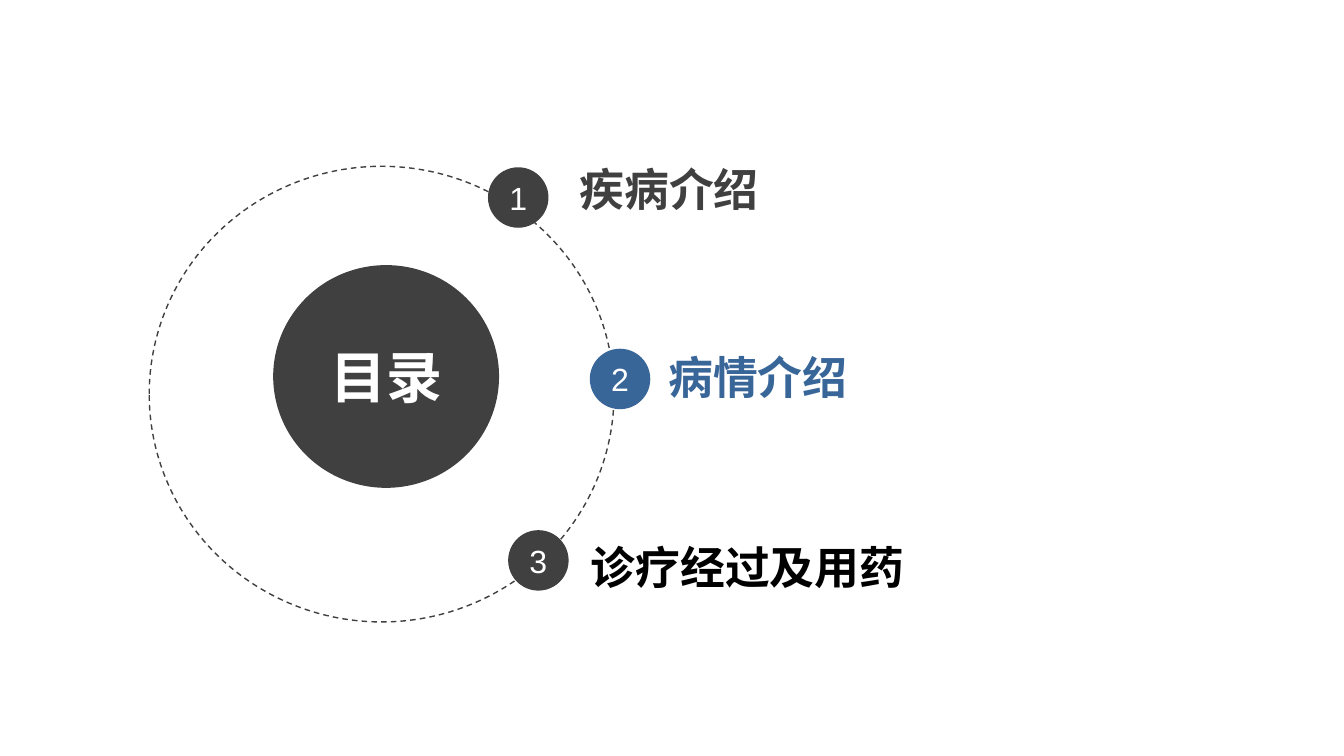
from dataclasses import dataclass

import pptx
import pptx.dml.color
import pptx.enum.dml
import pptx.enum.shapes
import pptx.enum.text
import pptx.oxml
import pptx.oxml.ns
import pptx.util
from pptx.util import Inches


@dataclass(frozen=True)
class Theme:
    dark: str = "404040"
    accent: str = "396698"
    black: str = "000000"
    white: str = "FFFFFF"
    latin: str = "Arial"
    chinese: str = "Noto Sans CJK SC"
    title_size: float = 40
    topic_size: float = 32
    number_size: float = 22.9


class ContentsPage:
    def __init__(self, deck, theme):
        self.theme = theme
        self.page = deck.slides.add_slide(deck.slide_layouts[6])

    def label(self, frame, text, size, color, font, bold=False):
        para = frame.paragraphs[0]
        span = para.add_run()
        span.text = text
        span.font.size = pptx.util.Pt(size)
        span.font.bold = bold
        span.font.name = font
        span.font.color.rgb = pptx.dml.color.RGBColor.from_string(color)
        east_asian = pptx.oxml.parse_xml(
            f'<a:ea {pptx.oxml.ns.nsdecls("a")} typeface="{self.theme.chinese}"/>'
        )
        span.font._element.find(pptx.oxml.ns.qn("a:latin")).addnext(east_asian)
        return para

    def ellipse(self, left, top, width, height):
        shape = self.page.shapes.add_shape(
            pptx.enum.shapes.MSO_SHAPE.OVAL,
            Inches(left), Inches(top), Inches(width), Inches(height),
        )
        shape.shadow.inherit = False
        return shape

    def orbit(self, left, top, width, height):
        ring = self.ellipse(left, top, width, height)
        ring.fill.background()
        ring.line.color.rgb = pptx.dml.color.RGBColor.from_string(self.theme.dark)
        ring.line.width = pptx.util.Pt(1)
        ring.line.dash_style = pptx.enum.dml.MSO_LINE.DASH

    def disc(self, left, top, width, height, color, text, size, bold=False):
        disc = self.ellipse(left, top, width, height)
        disc.fill.solid()
        disc.fill.fore_color.rgb = pptx.dml.color.RGBColor.from_string(color)
        disc.line.fill.background()
        frame = disc.text_frame
        frame.margin_left = frame.margin_right = 0
        frame.margin_top = frame.margin_bottom = 0
        frame.vertical_anchor = pptx.enum.text.MSO_ANCHOR.MIDDLE
        para = self.label(
            frame, text, size, self.theme.white, self.theme.latin, bold
        )
        para.alignment = pptx.enum.text.PP_ALIGN.CENTER

    def topic(self, left, top, width, text, color):
        box = self.page.shapes.add_textbox(
            Inches(left), Inches(top), Inches(width), Inches(0.64)
        )
        frame = box.text_frame
        frame.word_wrap = True
        frame.auto_size = pptx.enum.text.MSO_AUTO_SIZE.SHAPE_TO_FIT_TEXT
        self.label(
            frame, text, self.theme.topic_size, color, self.theme.chinese, bold=True
        )


def main():
    theme = Theme()
    deck = pptx.Presentation()
    deck.slide_width = Inches(13.33)
    deck.slide_height = Inches(7.5)
    contents = ContentsPage(deck, theme)

    contents.orbit(1.48, 1.65, 4.61, 4.52)
    contents.disc(2.71, 2.63, 2.24, 2.21, theme.dark, "目录", theme.title_size, True)

    topics = [
        ("疾病介绍", theme.dark, theme.dark, (4.84, 1.66), (5.65, 1.56, 5.4)),
        ("病情介绍", theme.accent, theme.accent, (5.85, 3.46), (6.53, 3.42, 5.19)),
        ("诊疗经过及用药", theme.dark, theme.black, (5.04, 5.26), (5.76, 5.31, 6.25)),
    ]
    for number, (text, disc_color, text_color, disc_at, text_at) in enumerate(topics, 1):
        contents.disc(*disc_at, 0.6, 0.6, disc_color, str(number), theme.number_size)
        contents.topic(*text_at, text, text_color)

    deck.save("out.pptx")


if __name__ == "__main__":
    main()
